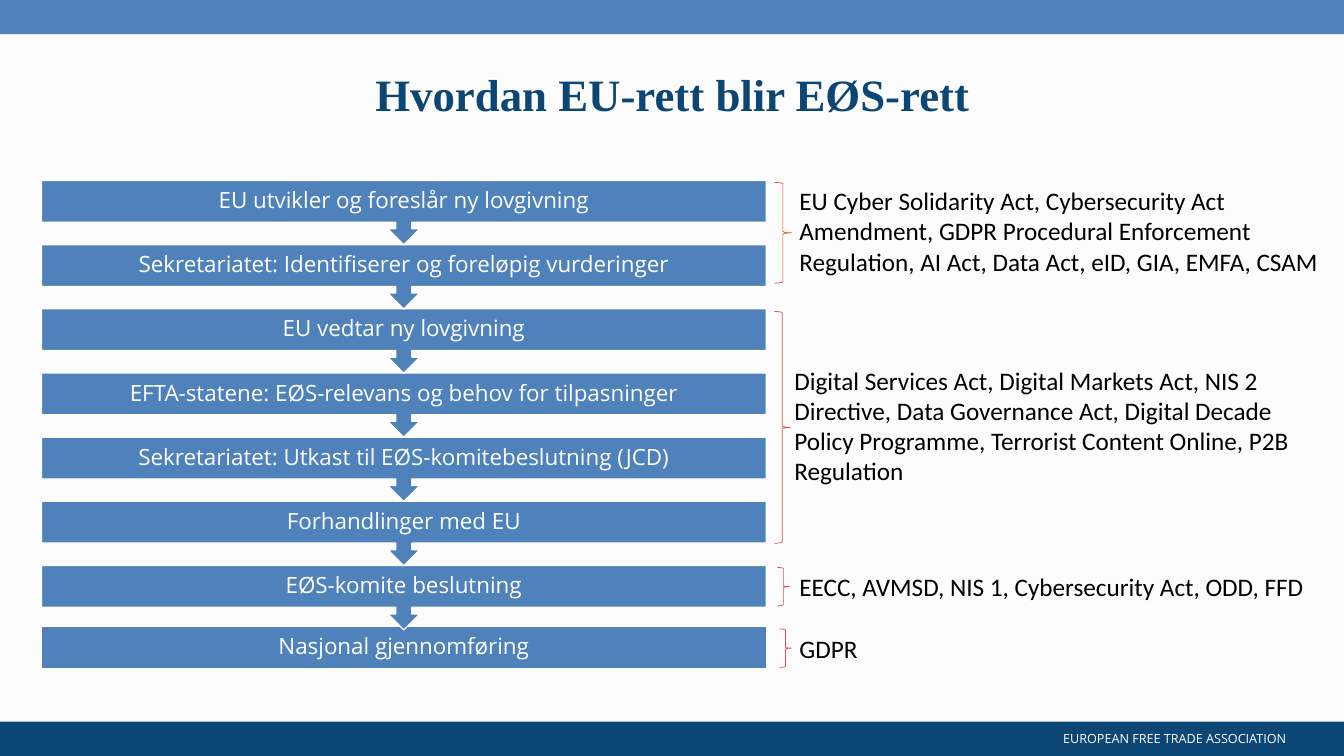
from pptx import Presentation
from pptx.dml.color import RGBColor
from pptx.enum.shapes import MSO_SHAPE as Shape
from pptx.enum.text import MSO_ANCHOR as Anchor, PP_ALIGN as Align
from pptx.util import Inches, Pt

NAVY = RGBColor(0x0C, 0x46, 0x74)
BLUE = RGBColor(0x4F, 0x82, 0xBA)
RED = RGBColor(0xDC, 0x51, 0x4E)
WHITE = RGBColor(0xFF, 0xFF, 0xFF)
BLACK = RGBColor(0, 0, 0)
PAPER = RGBColor(0xFC, 0xFC, 0xFC)

WIDTH, HEIGHT = 13.33, 7.5
STEP_LEFT, STEP_TOP, STEP_WIDTH = 0.41, 1.79, 7.19
STEP_PITCH = (5.61 - STEP_TOP) / 6
CALLOUT_HEIGHT, LAST_TOP, LAST_HEIGHT = 0.64, 6.21, 0.42

STEPS = [
    "EU utvikler og foreslår ny lovgivning",
    "Sekretariatet: Identifiserer og foreløpig vurderinger",
    "EU vedtar ny lovgivning",
    "EFTA-statene: EØS-relevans og behov for tilpasninger",
    "Sekretariatet: Utkast til EØS-komitebeslutning (JCD)",
    "Forhandlinger med EU",
    "EØS-komite beslutning",
    "Nasjonal gjennomføring",
]

# Each group of acts: brace box, text box, wording
ACTS = [
    ((7.68, 1.81, 0.17, 1), (7.83, 1.79, 5.41, 1.01),
     "EU Cyber Solidarity Act, Cybersecurity Act Amendment, GDPR Procedural "
     "Enforcement Regulation, AI Act, Data Act, eID, GIA, EMFA, CSAM"),
    ((7.68, 3.09, 0.16, 2.3), (7.78, 3.57, 5.41, 1.31),
     "Digital Services Act, Digital Markets Act, NIS 2 Directive, Data "
     "Governance Act, Digital Decade Policy Programme, Terrorist Content "
     "Online, P2B Regulation"),
    ((7.71, 5.63, 0.12, 0.38), (7.83, 5.62, 5.41, 0.4),
     "EECC, AVMSD, NIS 1, Cybersecurity Act, ODD, FFD"),
    ((7.73, 6.24, 0.12, 0.38), (7.83, 6.23, 5.41, 0.4), "GDPR"),
]


class ProcessSlide:
    """Holds the text styles and the slide being drawn."""

    styles = {
        "title": (NAVY, {"name": "Times New Roman", "size": Pt(32), "bold": True}),
        "step": (WHITE, {"name": "Open Sans", "size": Pt(16)}),
        "acts": (BLACK, {"name": "Calibri", "size": Pt(18)}),
        "footer": (WHITE, {"name": "Open Sans", "size": Pt(9)}),
    }

    def __init__(self, slide):
        self.slide = slide
        background = slide.background.fill
        background.solid()
        background.fore_color.rgb = PAPER

    def fill_frame(self, frame, wording, style, **layout):
        frame.word_wrap = True
        paragraph = frame.paragraphs[0]
        for attribute, value in layout.items():
            setattr(paragraph, attribute, value)
        run = paragraph.add_run()
        run.text = wording
        color, formats = self.styles[style]
        for attribute, value in formats.items():
            setattr(run.font, attribute, value)
        run.font.color.rgb = color

    def text(self, box, wording, style, **layout):
        area = self.slide.shapes.add_textbox(*map(Inches, box))
        self.fill_frame(area.text_frame, wording, style, **layout)

    def shape(self, kind, box, fill=None, line=None, weight=1):
        drawn = self.slide.shapes.add_shape(kind, *map(Inches, box))
        drawn.shadow.inherit = False
        for part, color in ((drawn.fill, fill), (drawn.line.fill, line)):
            if color is None:
                part.background()
            else:
                part.solid()
                part.fore_color.rgb = color
        if line is not None:
            drawn.line.width = Pt(weight)
        return drawn

    def step(self, kind, top, height, wording):
        box = (STEP_LEFT, top, STEP_WIDTH, height)
        frame = self.shape(kind, box, BLUE, WHITE).text_frame
        frame.vertical_anchor = Anchor.MIDDLE
        for side in ("left", "top", "right", "bottom"):
            setattr(frame, f"margin_{side}", Inches(0.12))
        self.fill_frame(frame, wording, "step", alignment=Align.CENTER,
                        line_spacing=0.9)

    def brace(self, box):
        self.shape(Shape.RIGHT_BRACE, box, line=RED, weight=0.5)


def main():
    deck = Presentation()
    deck.slide_width, deck.slide_height = Inches(WIDTH), Inches(HEIGHT)
    page = ProcessSlide(deck.slides.add_slide(deck.slide_layouts[6]))

    # Bands, footer and title
    page.shape(Shape.RECTANGLE, (0, 7.16, WIDTH, 0.34), NAVY)
    page.shape(Shape.RECTANGLE, (0, 0, WIDTH, 0.34), BLUE)
    page.text((9.97, 7.2, 3.36, 0.25), "EUROPEAN FREE TRADE ASSOCIATION",
              "footer", alignment=Align.CENTER)
    page.text((2.7, 0.67, 7.94, 0.94), "Hvordan EU-rett blir EØS-rett",
              "title", alignment=Align.CENTER, line_spacing=0.9)

    # Steps, from the last one up so that each arrow lies over the next box
    *earlier, last = STEPS
    page.step(Shape.RECTANGLE, LAST_TOP, LAST_HEIGHT, last)
    for index, wording in reversed(list(enumerate(earlier))):
        page.step(Shape.DOWN_ARROW_CALLOUT, STEP_TOP + index * STEP_PITCH,
                  CALLOUT_HEIGHT, wording)

    # Acts that have reached each stage
    for brace_box, text_box, wording in ACTS:
        page.brace(brace_box)
        page.text(text_box, wording, "acts")

    deck.save("out.pptx")


if __name__ == "__main__":
    main()
